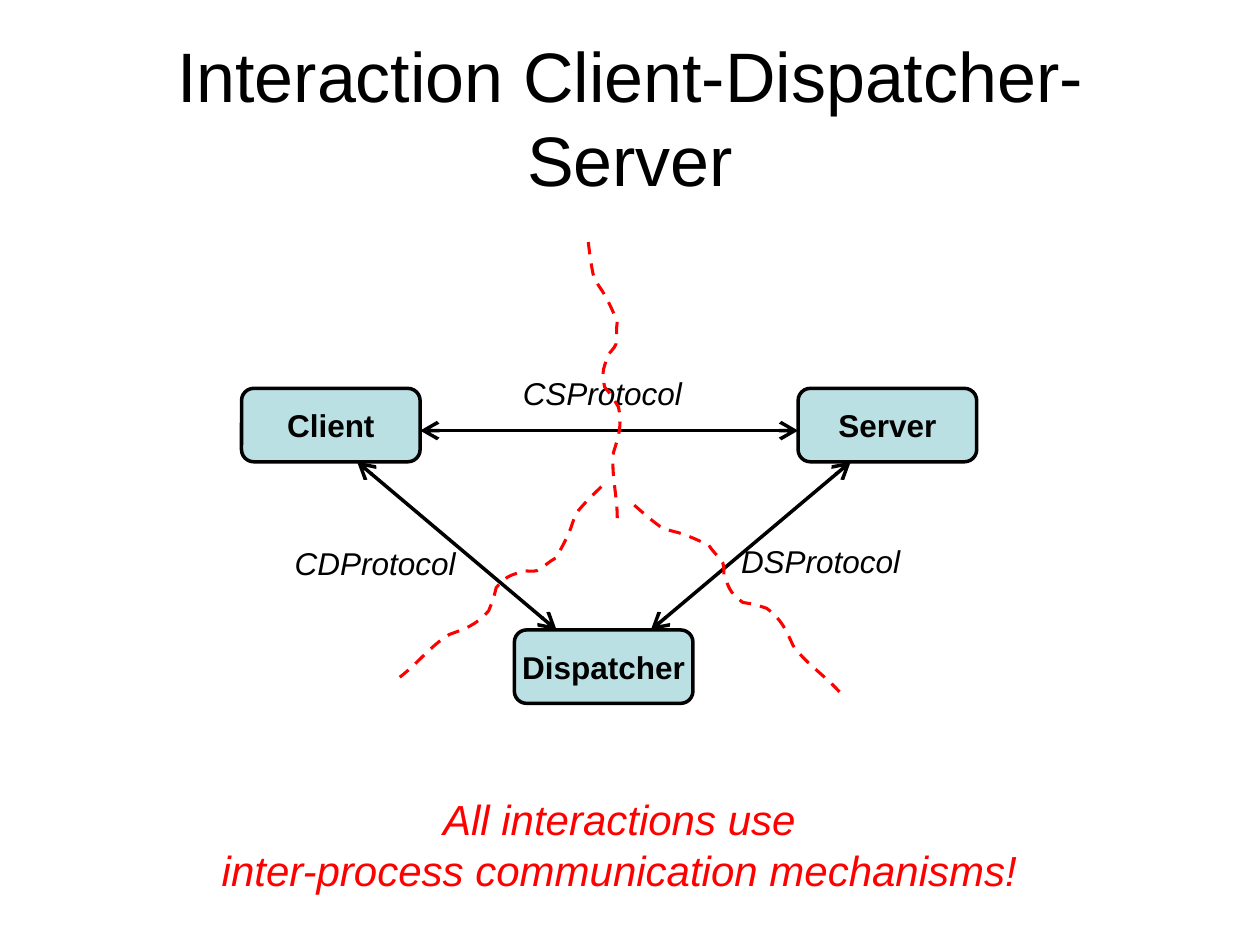
from lxml import etree
from pptx import Presentation
from pptx.dml.color import RGBColor
from pptx.enum.dml import MSO_LINE
from pptx.enum.shapes import MSO_CONNECTOR, MSO_SHAPE
from pptx.enum.text import MSO_ANCHOR, MSO_AUTO_SIZE, PP_ALIGN
from pptx.oxml.ns import qn
from pptx.util import Cm, Pt

STRAIGHT = MSO_CONNECTOR.STRAIGHT
ROUNDED = MSO_SHAPE.ROUNDED_RECTANGLE
DASH = MSO_LINE.DASH
CENTER = PP_ALIGN.CENTER
MIDDLE = MSO_ANCHOR.MIDDLE
TOP = MSO_ANCHOR.TOP
FIT_SHAPE = MSO_AUTO_SIZE.SHAPE_TO_FIT_TEXT
NO_FIT = MSO_AUTO_SIZE.NONE

BLACK = RGBColor(0x00, 0x00, 0x00)
WHITE = RGBColor(0xFF, 0xFF, 0xFF)
RED = RGBColor(0xFF, 0x00, 0x00)
PALE_TEAL = RGBColor(0xBB, 0xE0, 0xE3)

FONT = "Arial"
COMPONENT_SIZE = Cm(3.6), Cm(1.48)
LABEL_SIZE = Cm(3.85), Cm(1.02)

COMPONENTS = [("Client", 4.87, 7.83), ("Server", 16.09, 7.83), ("Dispatcher", 10.37, 12.7)]
CHANNELS = [
    (8.47, 8.68, 16.09, 8.68),
    (13.12, 12.7, 17.15, 9.31),
    (7.2, 9.31, 11.22, 12.7),
]
PROTOCOLS = [("CSProtocol", 10.22, 7.41), ("DSProtocol", 14.62, 10.8), ("CDProtocol", 5.64, 10.84)]
BOUNDARIES = [(11.86, 4.88, 0), (14.55, 9.25, 318.3), (9.78, 8.99, 52.6)]

BOUNDARY_UNIT = Cm(0.0254)
BOUNDARY_CURVE = [
    (1, 8), (2, 17), (4, 26), (5, 31), (11, 38), (13, 42),
    (17, 49), (20, 56), (23, 63), (22, 69), (23, 75), (22, 81),
    (21, 84), (16, 89), (16, 89), (13, 99), (10, 101), (13, 115),
    (14, 117), (16, 118), (17, 120), (20, 124), (24, 131), (24, 131),
    (27, 146), (24, 154), (20, 167), (18, 184), (23, 201), (23, 219),
]


def write_text(frame, lines, size, color=BLACK, bold=False, italic=False, anchor=MIDDLE, wrap=False, fit=NO_FIT):
    frame.word_wrap = wrap
    frame.auto_size = fit
    frame.vertical_anchor = anchor
    for index, line in enumerate(lines):
        paragraph = frame.add_paragraph() if index else frame.paragraphs[0]
        paragraph.alignment = CENTER
        run = paragraph.add_run()
        run.text = line
        run.font.name = FONT
        run.font.size = Pt(size)
        run.font.bold = bold
        run.font.italic = italic
        run.font.color.rgb = color


def set_title(slide, wording):
    title = slide.shapes.title
    title.left, title.top = Cm(1.27), Cm(0.76)
    title.width, title.height = Cm(22.86), Cm(3.18)
    write_text(title.text_frame, [wording], 40, wrap=True)


def add_component(slide, name, left, top):
    component = slide.shapes.add_shape(ROUNDED, Cm(left), Cm(top), *COMPONENT_SIZE)
    component.shadow.inherit = False
    component.fill.solid()
    component.fill.fore_color.rgb = PALE_TEAL
    component.line.color.rgb = BLACK
    component.line.width = Pt(2)
    write_text(component.text_frame, [name], 18, bold=True)


def add_channel(slide, *ends):
    channel = slide.shapes.add_connector(STRAIGHT, *map(Cm, ends))
    channel.line.color.rgb = BLACK
    channel.line.width = Pt(2)
    properties = channel._element.spPr
    outline = properties.find(qn("a:ln"))
    for end in ("a:headEnd", "a:tailEnd"):
        etree.SubElement(outline, qn(end), type="arrow", w="lg", len="lg")
    etree.SubElement(properties, qn("a:effectLst"))


def add_protocol(slide, name, left, top):
    label = slide.shapes.add_textbox(Cm(left), Cm(top), *LABEL_SIZE)
    write_text(label.text_frame, [name], 18, italic=True, anchor=TOP, fit=FIT_SHAPE)
    return label


def fill_translucent(shape, color, percent):
    shape.fill.solid()
    shape.fill.fore_color.rgb = color
    tone = shape._element.spPr.find(qn("a:solidFill"))[0]
    etree.SubElement(tone, qn("a:alpha"), val=str(percent * 1000))


def bend_segments(shape):
    segments = list(shape._element.iter(qn("a:lnTo")))
    for start in range(0, len(segments), 3):
        curve = etree.Element(qn("a:cubicBezTo"))
        segments[start].addprevious(curve)
        for segment in segments[start:start + 3]:
            curve.append(segment[0])
            segment.getparent().remove(segment)


def add_boundary(slide, left, top, angle):
    builder = slide.shapes.build_freeform(0, 0, scale=BOUNDARY_UNIT)
    builder.add_line_segments(BOUNDARY_CURVE, close=False)
    boundary = builder.convert_to_shape(Cm(left), Cm(top))
    bend_segments(boundary)
    boundary.rotation = angle
    boundary.shadow.inherit = False
    boundary.fill.background()
    boundary.line.color.rgb = RED
    boundary.line.width = Pt(1.75)
    boundary.line.dash_style = DASH


def add_conclusion(slide, lines):
    conclusion = slide.shapes.add_textbox(Cm(3.81), Cm(15.88), Cm(17.35), Cm(2.31))
    write_text(conclusion.text_frame, lines, 24, RED, italic=True, anchor=TOP, wrap=True, fit=FIT_SHAPE)


def main():
    deck = Presentation()
    deck.slide_width, deck.slide_height = Cm(25.4), Cm(19.05)
    slide = deck.slides.add_slide(deck.slide_layouts[5])
    set_title(slide, "Interaction Client-Dispatcher-Server")
    for component in COMPONENTS:
        add_component(slide, *component)
    for channel in CHANNELS:
        add_channel(slide, *channel)
    labels = [add_protocol(slide, *protocol) for protocol in PROTOCOLS]
    fill_translucent(labels[0], WHITE, 70)
    for boundary in BOUNDARIES:
        add_boundary(slide, *boundary)
    add_conclusion(slide, ["All interactions use", "inter-process communication mechanisms!"])
    deck.save("out.pptx")


if __name__ == "__main__":
    main()
